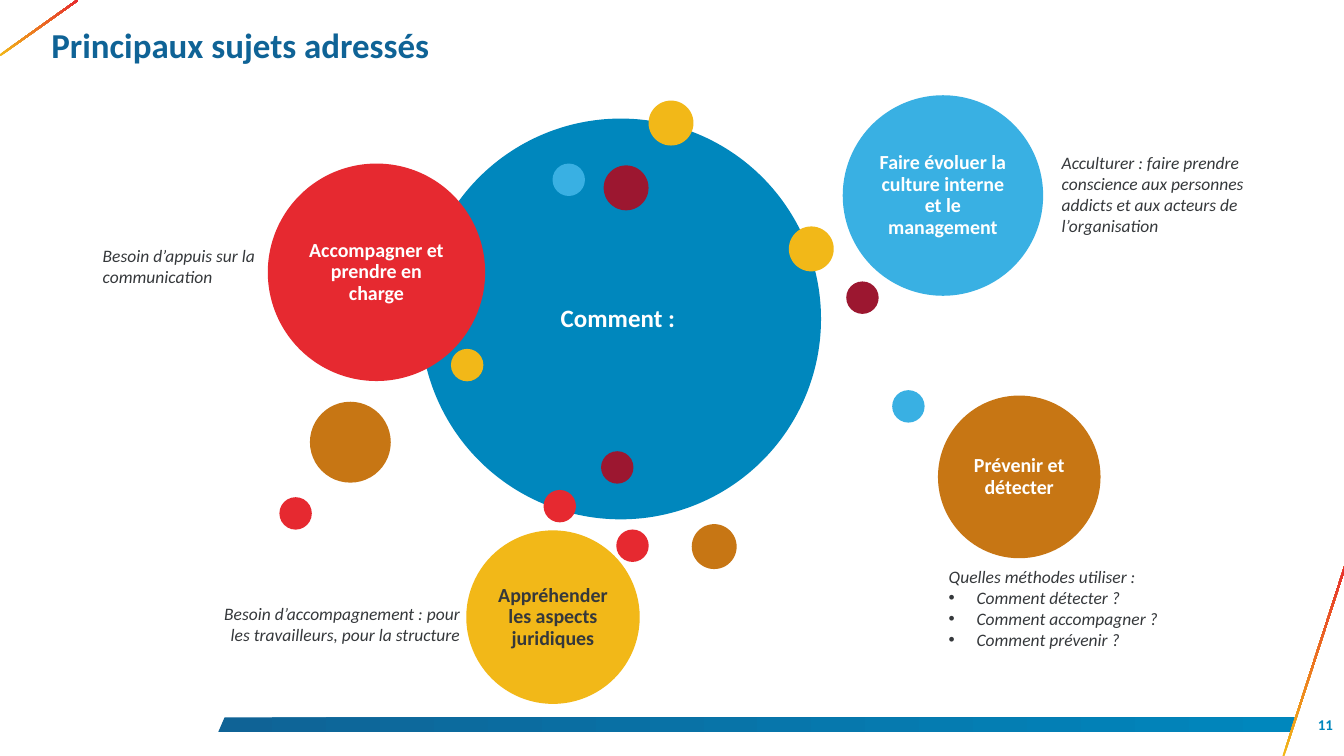
from dataclasses import dataclass

from lxml.etree import SubElement
from pptx import Presentation
from pptx.dml.color import RGBColor
from pptx.enum.shapes import MSO_SHAPE
from pptx.enum.text import MSO_ANCHOR, MSO_AUTO_SIZE, PP_ALIGN
from pptx.oxml.ns import qn
from pptx.util import Pt


@dataclass(frozen=True)
class Theme:
    font: str = "Calibri"
    navy: str = "0F6396"
    blue: str = "0087BD"
    sky: str = "39B0E3"
    red: str = "E62930"
    crimson: str = "9C1730"
    yellow: str = "F2B818"
    ochre: str = "C77614"
    white: str = "FFFFFF"
    ink: str = "35383B"
    title_size: int = 28
    hub_size: int = 20
    topic_size: int = 16
    note_size: int = 14
    number_size: int = 12
    dot: int = 26
    large_dot: int = 36
    bullet_indent: float = 22.3


class SlideBuilder:
    def __init__(self, page, theme):
        self.page = page
        self.theme = theme

    def place(self, shape, left, top, width, height):
        shape.left, shape.top = Pt(left), Pt(top)
        shape.width, shape.height = Pt(width), Pt(height)

    def frame(self, shape, inset_x=7.2, inset_y=3.6, anchor=MSO_ANCHOR.TOP):
        frame = shape.text_frame
        frame.word_wrap = True
        frame.auto_size = MSO_AUTO_SIZE.NONE
        frame.vertical_anchor = anchor
        frame.margin_left = frame.margin_right = Pt(inset_x)
        frame.margin_top = frame.margin_bottom = Pt(inset_y)
        return frame

    def fill_text(self, frame, text, size, color, align=PP_ALIGN.LEFT, bold=False, italic=False):
        frame.text = text
        for paragraph in frame.paragraphs:
            paragraph.alignment = align
            for span in paragraph.runs:
                span.font.name = self.theme.font
                span.font.size = Pt(size)
                span.font.bold = bold
                span.font.italic = italic
                span.font.color.rgb = RGBColor.from_string(color)

    def gradient(self, shape, first, last):
        shape.shadow.inherit = False
        shape.line.fill.background()
        shape.fill.gradient()
        shape.fill.gradient_angle = 0
        for stop, color in zip(shape.fill.gradient_stops, (first, last)):
            stop.color.rgb = RGBColor.from_string(color)

    def footer_band(self, corners):
        points = [(Pt(x), Pt(y)) for x, y in corners]
        outline = self.page.shapes.build_freeform(*points[0])
        outline.add_line_segments(points[1:], close=True)
        self.gradient(outline.convert_to_shape(), self.theme.navy, self.theme.blue)

    def accent_strip(self, left, top, length, rotation):
        strip = self.page.shapes.add_shape(
            MSO_SHAPE.RECTANGLE, Pt(left), Pt(top), Pt(length), Pt(1.5))
        strip.rotation = rotation
        self.gradient(strip, self.theme.yellow, self.theme.red)

    def title(self, text, *bounds):
        box = self.page.shapes.title
        self.place(box, *bounds)
        self.fill_text(self.frame(box, 3, 3), text, self.theme.title_size,
                       self.theme.navy, bold=True)

    def circle(self, left, top, diameter, color):
        shape = self.page.shapes.add_shape(
            MSO_SHAPE.OVAL, Pt(left), Pt(top), Pt(diameter), Pt(diameter))
        shape.shadow.inherit = False
        shape.fill.solid()
        shape.fill.fore_color.rgb = RGBColor.from_string(color)
        shape.line.fill.background()
        return shape

    def topic(self, left, top, diameter, color, text, size, text_color):
        shape = self.circle(left, top, diameter, color)
        frame = self.frame(shape, 5, 5, MSO_ANCHOR.MIDDLE)
        self.fill_text(frame, text, size, text_color, PP_ALIGN.CENTER, bold=True)
        frame.paragraphs[0].line_spacing = 0.9

    def note(self, text, bounds, align=PP_ALIGN.LEFT):
        box = self.page.shapes.add_textbox(*map(Pt, bounds))
        self.fill_text(self.frame(box), text, self.theme.note_size,
                       self.theme.ink, align, italic=True)

    def bullet_list(self, heading, items, *bounds):
        box = self.page.placeholders[1]
        self.place(box, *bounds)
        frame = self.frame(box)
        self.fill_text(frame, "\n".join([heading, *items]), self.theme.note_size,
                       self.theme.ink, italic=True)
        for position, paragraph in enumerate(frame.paragraphs):
            indent = Pt(self.theme.bullet_indent) if position else 0
            properties = paragraph._p.get_or_add_pPr()
            properties.set("marL", str(indent))
            properties.set("indent", str(-indent))
            if position:
                SubElement(properties, qn("a:buFont"), typeface="Arial")
                SubElement(properties, qn("a:buChar"), char="•")
            else:
                SubElement(properties, qn("a:buNone"))
            paragraph.space_before = Pt(0)

    def page_number(self, text, *bounds):
        box = self.page.shapes.add_textbox(*map(Pt, bounds))
        self.fill_text(self.frame(box, 0, 0, MSO_ANCHOR.MIDDLE), text,
                       self.theme.number_size, self.theme.blue, PP_ALIGN.RIGHT, bold=True)


def main():
    theme = Theme()
    deck = Presentation()
    deck.slide_width, deck.slide_height = Pt(1077.12), Pt(605.52)
    builder = SlideBuilder(deck.slides.add_slide(deck.slide_layouts[1]), theme)

    builder.footer_band([(180, 574.6), (1039, 574.6), (1034.6, 586.1), (175, 586.1)])
    builder.accent_strip(970.6, 526.3, 167, 288)
    builder.accent_strip(-7.2, 21.6, 76.3, 324.6)
    builder.title("Principaux sujets adressés", 38.2, 15.8, 1000.8, 64.8)

    builder.topic(337, 95, 321, theme.blue, "Comment : ", theme.hub_size, theme.white)
    topics = [
        (214.6, 131, 174.2, theme.red, "Accompagner et prendre en charge", theme.white),
        (675.4, 76.3, 160.6, theme.sky,
         "Faire évoluer la culture interne et le management", theme.white),
        (751.7, 316.8, 130.3, theme.ochre, "Prévenir et détecter", theme.white),
        (373.7, 424.8, 139, theme.yellow, "Appréhender les aspects juridiques", theme.ink),
    ]
    for left, top, diameter, color, text, text_color in topics:
        builder.topic(left, top, diameter, color, text, theme.topic_size, text_color)

    dots = [
        (519.8, 80.6, theme.large_dot, theme.yellow),
        (632.2, 181.4, theme.large_dot, theme.yellow),
        (361.4, 279.4, theme.dot, theme.yellow),
        (435.6, 392.4, theme.dot, theme.red),
        (223.9, 398.2, theme.dot, theme.red),
        (493.9, 424.1, theme.dot, theme.red),
        (483.8, 132.5, theme.large_dot, theme.crimson),
        (678.2, 225.4, theme.dot, theme.crimson),
        (481.7, 361.4, theme.dot, theme.crimson),
        (248.4, 321.8, 64.8, theme.ochre),
        (554.4, 419.8, theme.large_dot, theme.ochre),
        (442.8, 131, theme.dot, theme.sky),
        (715, 312.5, theme.dot, theme.sky),
    ]
    for dot in dots:
        builder.circle(*dot)

    builder.note("Besoin d’appuis sur la communication", (75.2, 193, 140, 57.6))
    builder.note("Besoin d’accompagnement : pour les travailleurs, pour la structure",
                 (157, 479.5, 218.9, 40.3), PP_ALIGN.RIGHT)
    builder.note("Acculturer : faire prendre conscience aux personnes addicts "
                 "et aux acteurs de l’organisation", (843.8, 118.1, 183.6, 74.2))
    builder.bullet_list("Quelles méthodes utiliser :",
                        ["Comment détecter ?", "Comment accompagner ?", "Comment prévenir ?"],
                        753.1, 450, 260, 74.2)
    builder.page_number("11", 1027.4, 571.7, 41, 16.6)
    deck.save("out.pptx")


if __name__ == "__main__":
    main()
